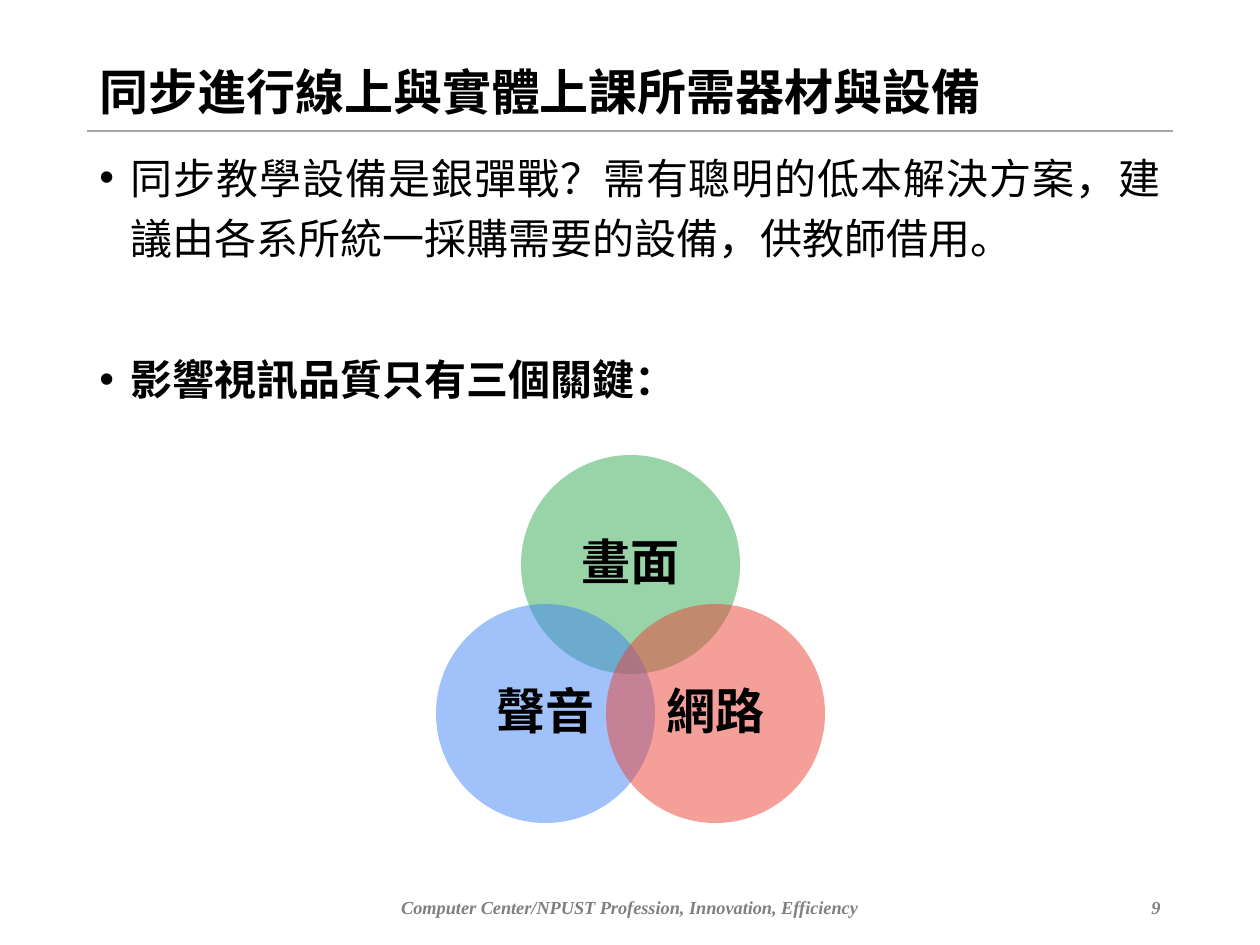
from lxml.etree import SubElement
from pptx import Presentation
from pptx.dml.color import RGBColor
from pptx.enum.shapes import MSO_CONNECTOR, MSO_SHAPE
from pptx.enum.text import MSO_ANCHOR, MSO_AUTO_SIZE, PP_ALIGN as Align
from pptx.oxml.ns import qn
from pptx.util import Pt

EMU_PER_PX = 914400 / 126
FONT = "Times New Roman"
COLORS = {
    "text": "000000",
    "rule": "A6A6A6",
    "footer": "808080",
    "green": "34A853",
    "blue": "4285F4",
    "red": "EA4335",
}


def px(length):
    return round(length * EMU_PER_PX)


def color(name):
    return RGBColor.from_string(COLORS[name])


def style(paragraph, size, tint="text", bold=False, italic=False, align=Align.LEFT):
    paragraph.alignment = align
    font = paragraph.font
    font.name, font.size = FONT, Pt(size)
    font.bold, font.italic = bold, italic
    font.color.rgb = color(tint)


def add_text_frame(slide, left, top, width, height):
    frame = slide.shapes.add_textbox(px(left), px(top), px(width), px(height)).text_frame
    frame.word_wrap = True
    return frame


def add_heading(slide, text, left, top, width, height):
    rule = slide.shapes.add_connector(
        MSO_CONNECTOR.STRAIGHT, px(left), px(top + height), px(left + width), px(top + height))
    rule.line.color.rgb = color("rule")
    rule.line.width = Pt(0.75)
    SubElement(rule._element.spPr, qn("a:effectLst"))

    title = slide.shapes.title
    title.left, title.top = px(left), px(top)
    title.width, title.height = px(width), px(height)
    frame = title.text_frame
    frame.text = text
    frame.auto_size = MSO_AUTO_SIZE.NONE
    frame.vertical_anchor = MSO_ANCHOR.MIDDLE
    paragraph = frame.paragraphs[0]
    paragraph.line_spacing = 0.9
    style(paragraph, 28, bold=True)


def add_bullets(slide, points, left, top, width, height):
    frame = add_text_frame(slide, left, top, width, height)
    for index, (text, bold, space_before) in enumerate(points):
        paragraph = frame.paragraphs[0] if index == 0 else frame.add_paragraph()
        paragraph.text = text
        properties = paragraph._p.get_or_add_pPr()
        properties.set("marL", "228600")
        properties.set("indent", "-228600")
        SubElement(properties, qn("a:buFont"), typeface="Arial")
        SubElement(properties, qn("a:buChar"), char="•")
        paragraph.line_spacing = 1.2
        paragraph.space_before = Pt(space_before)
        style(paragraph, 24, bold=bold, align=Align.JUSTIFY)


def add_venn(slide, left, top, diameter, step_x, step_y):
    factors = [
        ("畫面", "green", step_x, 0),
        ("聲音", "blue", 0, step_y),
        ("網路", "red", 2 * step_x, step_y),
    ]
    venn = slide.shapes.add_group_shape()
    for label, tint, dx, dy in factors:
        circle = venn.shapes.add_shape(
            MSO_SHAPE.OVAL, px(left + dx), px(top + dy), px(diameter), px(diameter))
        circle.shadow.inherit = False
        circle.line.fill.background()
        circle.fill.solid()
        circle.fill.fore_color.rgb = color(tint)
        rgb = circle._element.spPr.find(qn("a:solidFill")).find(qn("a:srgbClr"))
        SubElement(rgb, qn("a:alpha"), val="50000")

        frame = circle.text_frame
        frame.margin_left = frame.margin_right = px(5)
        frame.margin_top = frame.margin_bottom = px(5)
        frame.vertical_anchor = MSO_ANCHOR.MIDDLE
        paragraph = frame.paragraphs[0]
        paragraph.text = label
        paragraph.line_spacing = 0.9
        style(paragraph, 28, bold=True, align=Align.CENTER)


def add_footer(slide, motto, number, left, top, width, height):
    motto_width, number_width = 556, 253
    cells = [
        (motto, left + (width - motto_width) / 2, motto_width, Align.CENTER),
        (number, left + width - number_width, number_width, Align.RIGHT),
    ]
    for text, cell_left, cell_width, align in cells:
        paragraph = add_text_frame(slide, cell_left, top, cell_width, height).paragraphs[0]
        paragraph.text = text
        style(paragraph, 10.5, "footer", bold=True, italic=True, align=align)


def main():
    prs = Presentation()
    prs.slide_width, prs.slide_height = px(1260), px(945)
    slide = prs.slides.add_slide(prs.slide_layouts[5])
    margin, content_width = 87, 1086

    add_heading(slide, "同步進行線上與實體上課所需器材與設備", margin, 58, content_width, 73)
    add_bullets(slide, [
        ("同步教學設備是銀彈戰？需有聰明的低本解決方案，建議由各系所統一採購需要的設備，供教師借用。", False, 0),
        ("影響視訊品質只有三個關鍵：", True, 46),
    ], margin, 136, content_width, 747)
    add_venn(slide, 436, 455, 219, 85, 149)
    add_footer(slide, "Computer Center/NPUST Profession, Innovation, Efficiency", "9",
               margin, 890, content_width, 36)
    prs.save("out.pptx")


if __name__ == "__main__":
    main()
